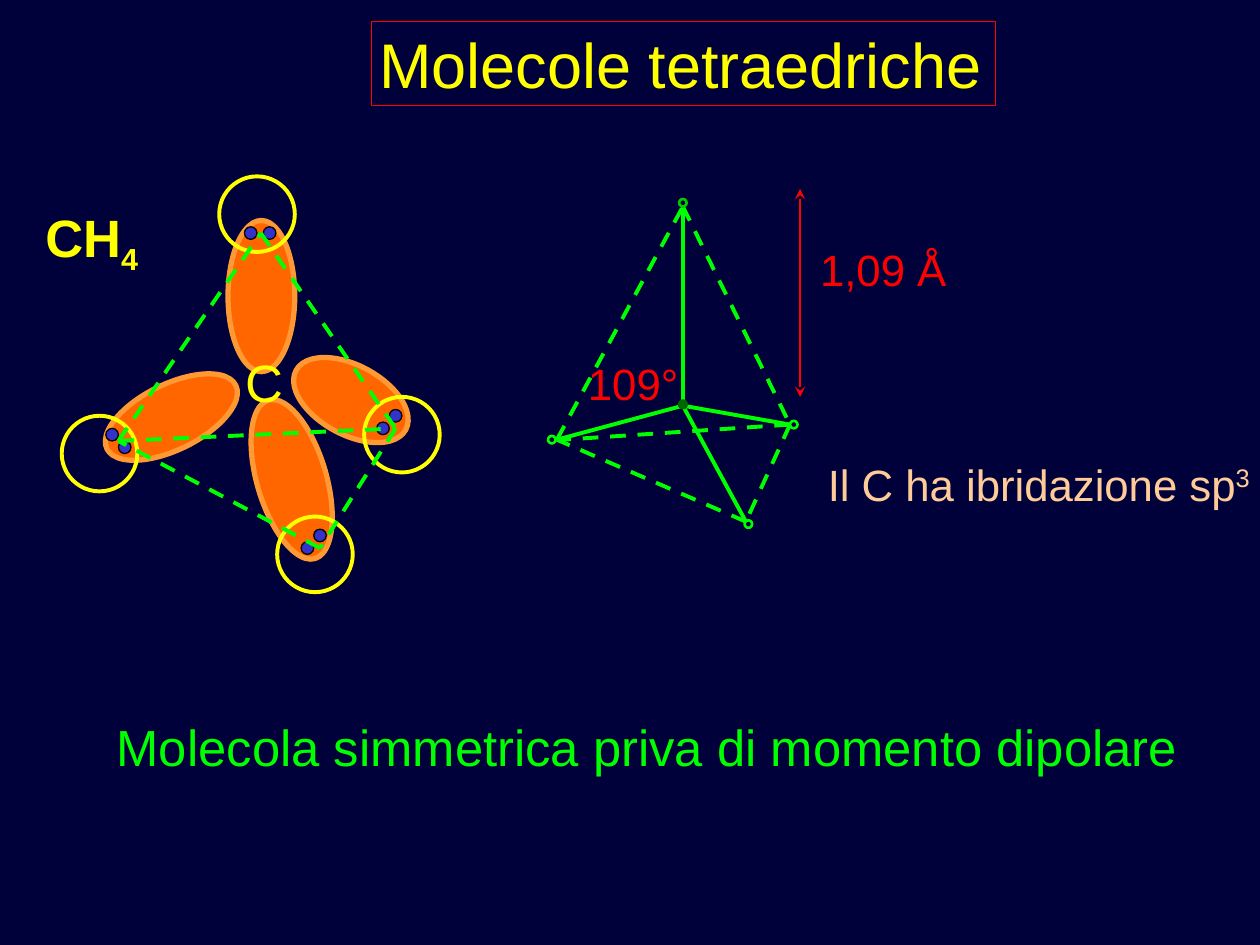
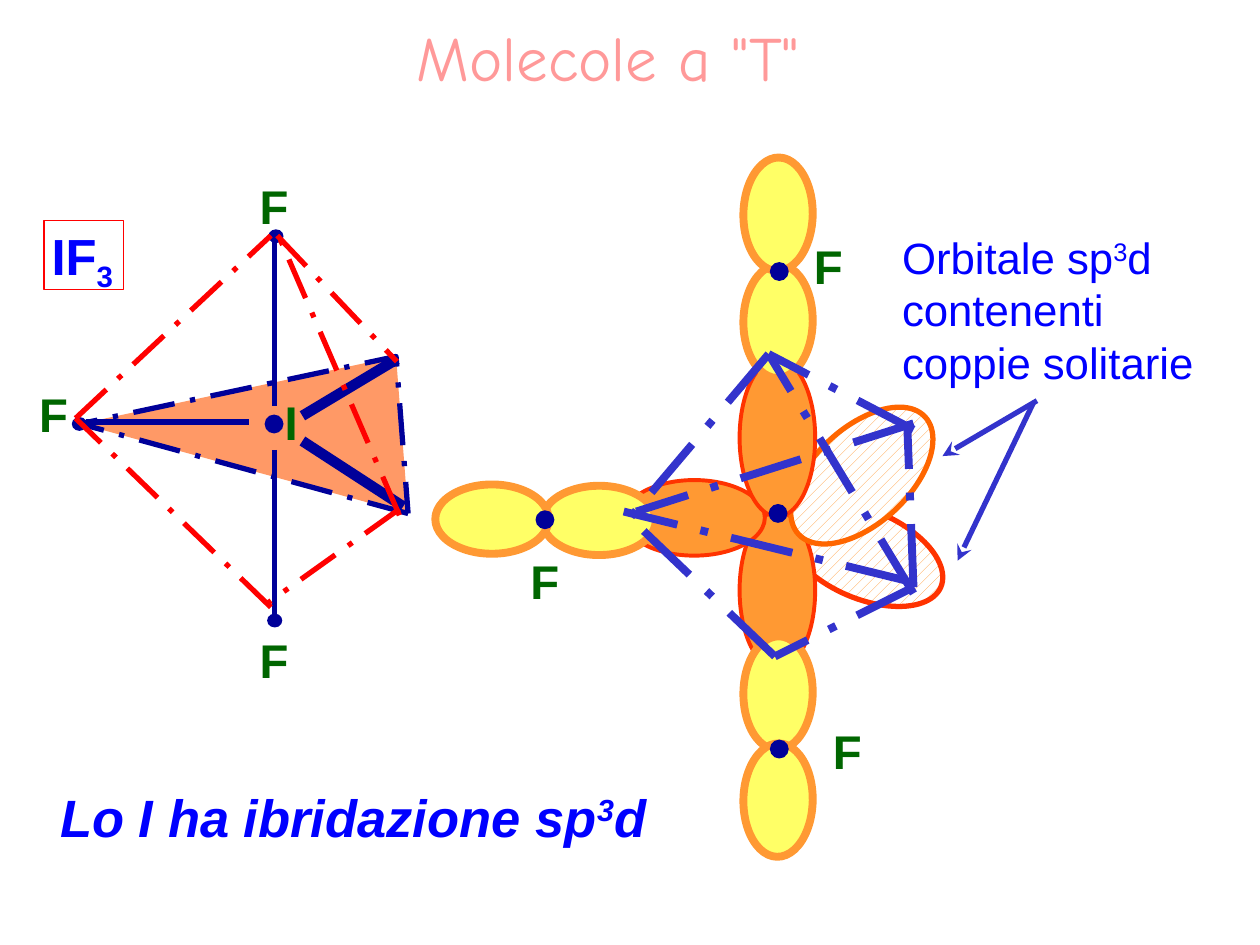
import dataclasses
import itertools

import lxml.etree
import pptx
import pptx.dml.color
import pptx.enum.dml
import pptx.enum.shapes
import pptx.enum.text
import pptx.oxml.ns
import pptx.util

SHAPE = pptx.enum.shapes.MSO_SHAPE
DASH = pptx.enum.dml.MSO_LINE.DASH
MIXED = pptx.enum.dml.MSO_LINE.LONG_DASH_DOT
LEFT = pptx.enum.text.PP_ALIGN.LEFT
MIDDLE = pptx.enum.text.PP_ALIGN.CENTER


@dataclasses.dataclass(frozen=True)
class Theme:
    night: str = "00003A"
    white: str = "FFFFFF"
    black: str = "000000"
    yellow: str = "FFFF00"
    lemon: str = "FFFF66"
    orange: str = "FF6600"
    amber: str = "FF9933"
    coral: str = "FF9966"
    peach: str = "FFCC99"
    pink: str = "FF9999"
    red: str = "FF0000"
    flame: str = "FF3300"
    lime: str = "00FF00"
    leaf: str = "00CC00"
    forest: str = "006600"
    blue: str = "0000FF"
    navy: str = "000099"
    iris: str = "3333CC"
    font: str = "Arial"
    script: str = "Comic Neue"
    title: int = 36
    head: int = 30
    note: int = 29
    atom: int = 27
    body: int = 25
    raised: int = 30
    lowered: int = -25


def tone(code):
    return pptx.dml.color.RGBColor.from_string(code)


class Board:
    columns, rows = 100, 75

    def __init__(self, theme):
        self.theme = theme
        self.deck = pptx.Presentation()
        self.deck.slide_width = pptx.util.Inches(10)
        self.deck.slide_height = pptx.util.Inches(7.5)
        self.slide = None

    def start(self, color):
        self.slide = self.deck.slides.add_slide(self.deck.slide_layouts[6])
        fill = self.slide.background.fill
        fill.solid()
        fill.fore_color.rgb = tone(color)

    def grid(self, *cells):
        steps = (self.deck.slide_width / self.columns, self.deck.slide_height / self.rows)
        return [round(cell * step) for cell, step in zip(cells, itertools.cycle(steps))]

    def stroke(self, line, color, width, dash=None):
        line.color.rgb = tone(color)
        line.width = pptx.util.Pt(width)
        if dash:
            line.dash_style = dash

    def form(self, frame, fill=None, edge=None, turn=0, kind=SHAPE.OVAL, hatch=False):
        shape = self.slide.shapes.add_shape(kind, *self.grid(*frame))
        shape.shadow.inherit = False
        shape.rotation = turn
        if hatch:
            shape.fill.patterned()
            shape.fill.pattern = pptx.enum.dml.MSO_PATTERN.DASHED_UPWARD_DIAGONAL
            shape.fill.back_color.rgb = tone(self.theme.white)
        elif fill:
            shape.fill.solid()
        else:
            shape.fill.background()
        if fill:
            shape.fill.fore_color.rgb = tone(fill)
        if edge:
            self.stroke(shape.line, *edge)
        else:
            shape.line.fill.background()
        return shape

    def link(self, start, end, color, width, dash=None, tips=()):
        line = self.slide.shapes.add_connector(
            pptx.enum.shapes.MSO_CONNECTOR.STRAIGHT, *self.grid(*start, *end))
        self.stroke(line.line, color, width, dash)
        qn = pptx.oxml.ns.qn
        for tip in tips:
            lxml.etree.SubElement(line.line._get_or_add_ln(), qn(f"a:{tip}"), type="stealth")
        lxml.etree.SubElement(line._element.spPr, qn("a:effectLst"))

    def chain(self, points, *style):
        for start, end in itertools.pairwise(points):
            self.link(start, end, *style)

    def text(self, frame, words, size, color, align=LEFT, shift=0, bold=False,
             slant=False, edge=None, font=None, inset=(0.6, 0.3), fade=None):
        if edge:
            box = self.form(frame, edge=edge, kind=SHAPE.RECTANGLE)
        else:
            box = self.slide.shapes.add_textbox(*self.grid(*frame))
        body = box.text_frame
        body.word_wrap = False
        body.auto_size = pptx.enum.text.MSO_AUTO_SIZE.SHAPE_TO_FIT_TEXT
        body.vertical_anchor = pptx.enum.text.MSO_ANCHOR.TOP
        body.margin_left, body.margin_top = self.grid(*inset)
        body.margin_right, body.margin_bottom = self.grid(*inset)
        for index, row in enumerate(words.split("\n")):
            para = body.add_paragraph() if index else body.paragraphs[0]
            para.alignment = align
            for place, part in enumerate(row.split("|")):
                run = para.add_run()
                run.text = part
                run.font.name = font or self.theme.font
                run.font.size = pptx.util.Pt(size)
                run.font.bold = bold
                run.font.italic = slant
                if fade:
                    run.font.fill.gradient()
                    run.font.fill.gradient_angle = 270
                    for stop, shade in zip(run.font.fill.gradient_stops, (color, fade)):
                        stop.color.rgb = tone(shade)
                else:
                    run.font.color.rgb = tone(color)
                if place % 2:
                    run._r.get_or_add_rPr().set("baseline", str(shift * 1000))


def methane(board):
    t = board.theme
    board.start(t.night)
    board.text((29.5, 1.7, 49.5, 6.7), "Molecole tetraedriche", t.title, t.yellow,
               edge=(t.red, 0.75))

    lobes = [((18.1, 17.5, 5.3, 12), 0), ((25.1, 26.8, 5.5, 9.9), 118.4),
             ((11, 27.4, 5.2, 11.4), 63.8), ((20.4, 31.5, 5.5, 13.1), 343.6)]
    for frame, turn in lobes:
        board.form(frame, t.orange, (t.amber, 3), turn)
    board.text((18.9, 27.5, 4.3, 5.7), "C", t.head, t.yellow)
    for x, y in [(28.9, 31.5), (22, 41), (4.9, 33), (17.4, 14)]:
        board.form((x, y, 6, 6), edge=(t.yellow, 2.25))
    spots = [(30.9, 32.5), (29.9, 33.5), (20.9, 18), (19.4, 18),
             (8.4, 34), (9.4, 35), (24.9, 42), (23.9, 43)]
    for x, y in spots:
        board.form((x, y, 1, 1), t.iris, (t.black, 0.75))

    bond = (t.lime, 2.25)
    left, top, right, low = (9.4, 35), (20.7, 18.5), (31.4, 34), (25.4, 43.5)
    board.chain([left, top, right, low, left, right], *bond, DASH)

    left, top, right, low = (44.2, 34.9), (54.2, 16.4), (62.7, 33.7), (59.2, 41.4)
    board.chain([left, top, right, low, left], *bond, DASH)
    for tip in (top, low, right, left):
        board.link((54.2, 32.2), tip, *bond)
    board.link(right, (44.7, 34.9), *bond, DASH)
    knots = [(53.9, 15.8, None, t.leaf), (53.9, 31.8, t.forest, t.forest),
             (43.5, 34.6, None, t.lime), (59.1, 41.3, None, t.lime),
             (62.7, 33.4, None, t.lime)]
    for x, y, fill, edge in knots:
        board.form((x, y, 0.6, 0.6), fill, (edge, 1.5))

    board.text((3, 16, 8.8, 5.7), "CH|4", t.head, t.yellow, shift=t.lowered, bold=True)
    board.text((64.8, 36, 35.3, 4.8), "Il C ha ibridazione sp|3", t.body, t.peach,
               MIDDLE, t.raised)
    board.link((63.5, 15), (63.5, 31.5), t.red, 0.75, tips=("headEnd", "tailEnd"))
    board.text((64.4, 19, 11.4, 4.8), "1,09 Å", t.body, t.red, MIDDLE)
    board.text((46, 28, 8.5, 4.8), "109°", t.body, t.red, MIDDLE)
    board.text((8.3, 56.5, 86.2, 5.5), "Molecola simmetrica priva di momento dipolare",
               t.note, t.lime, MIDDLE)


def iodine(board):
    t = board.theme
    board.start(t.white)
    core = (t.flame, 2.25)
    board.form((65.1, 37.4, 7, 13.2), t.amber, (t.flame, 3), 293.1, hatch=True)
    board.form((58.7, 40.6, 6, 12.5), t.amber, core)
    board.form((64.6, 30.9, 7.6, 13.7), t.amber, (t.orange, 3), 47.1, hatch=True)

    plane = board.form((13, 22.8, 12.5, 25.4), t.coral, (t.navy, 3, MIXED), 265.6,
                       SHAPE.ISOSCELES_TRIANGLE)
    plane.adjustments[0] = 0.728
    bonds = [((21.8, 35.7), (21.8, 48.7), 3), ((21.8, 19.2), (21.8, 32.2), 3),
             ((6.8, 33.5), (19.8, 33.5), 3), ((24, 33), (31.5, 28.5), 6),
             ((24, 35), (32, 40.2), 6)]
    for start, end, width in bonds:
        board.link(start, end, t.navy, width)
    board.form((21, 32.9, 1.5, 1.5), t.navy)
    for x, y in [(5.7, 33.1), (21.2, 48.7), (21.3, 18.2)]:
        board.form((x, y, 1.2, 1.1), t.navy)
    board.text((22, 30.9, 2.3, 5.1), "I", t.atom, t.forest, bold=True)

    edges = [[(22, 18.7), (31.5, 28.7)], [(21.5, 48.2), (6, 33.2), (21.5, 18.7)],
             [(31.7, 40.4), (21.2, 47.9)], [(31.7, 40.9), (22.2, 18.9)]]
    for points in edges:
        board.chain(points, t.red, 3, MIXED)

    board.text((3.5, 17.5, 6.3, 5.5), "IF|3", t.note, t.blue, shift=t.lowered,
               bold=True, edge=(t.red, 0.75))
    board.text((4.2, 62, 49.4, 5.7), "Lo I ha ibridazione sp|3|d", t.head, t.blue,
               shift=t.raised, bold=True, slant=True)
    board.text((3.5, 1, 89.5, 8.5), 'Molecole a "T"', t.title, t.pink, MIDDLE,
               font=t.script, inset=(1, 0.5), fade=t.red)

    board.form((52.1, 35.5, 6, 11.2), t.amber, core, 270)
    board.form((58.7, 28.5, 6, 12.5), t.amber, core)
    board.form((61, 40, 1.5, 1.5), t.navy)
    lobes = [(44.8, 36.8, 270), (36.3, 36.7, 270), (59, 21, 181),
             (59, 50.5, 181), (59, 12.5, 181), (59, 59, 181)]
    for x, y, turn in lobes:
        board.form((x, y, 5.5, 9), t.lemon, (t.amber, 4.5), turn)
    for x, y in [(42.5, 40.5), (61.1, 20.8), (61.1, 58.7)]:
        board.form((x, y, 1.5, 1.5), t.navy)
    atoms = [(20, 13.8), (2.5, 30.3), (20, 49.8), (65.5, 57), (41.5, 43.5), (64, 18.5)]
    for x, y in atoms:
        board.text((x, y, 3.5, 5.1), "F", t.atom, t.forest, bold=True)

    left, top, low, front = (50, 41.1), (61, 28.1), (61.5, 52.1), (72.5, 46.6)
    edges = [[low, left], [(72.5, 34.1), top, left], [front, (72, 33.6)], [front, low],
             [(72.5, 33.6), (50.5, 40.6)], [(72, 46.1), (49.5, 40.6)],
             [(72.5, 47.1), top]]
    for points in edges:
        board.chain(points, t.iris, 4.5, MIXED)

    board.text((71, 18, 24.6, 13.2), "Orbitale sp|3|d\ncontenenti\ncoppie solitarie",
               t.body, t.blue, shift=t.raised)
    for start, end in [((82.3, 31.8), (74.8, 36.2)), ((82, 32), (76, 44.5))]:
        board.link(start, end, t.iris, 3, tips=("tailEnd",))


def main():
    board = Board(Theme())
    methane(board)
    iodine(board)
    board.deck.save("out.pptx")


if __name__ == "__main__":
    main()
